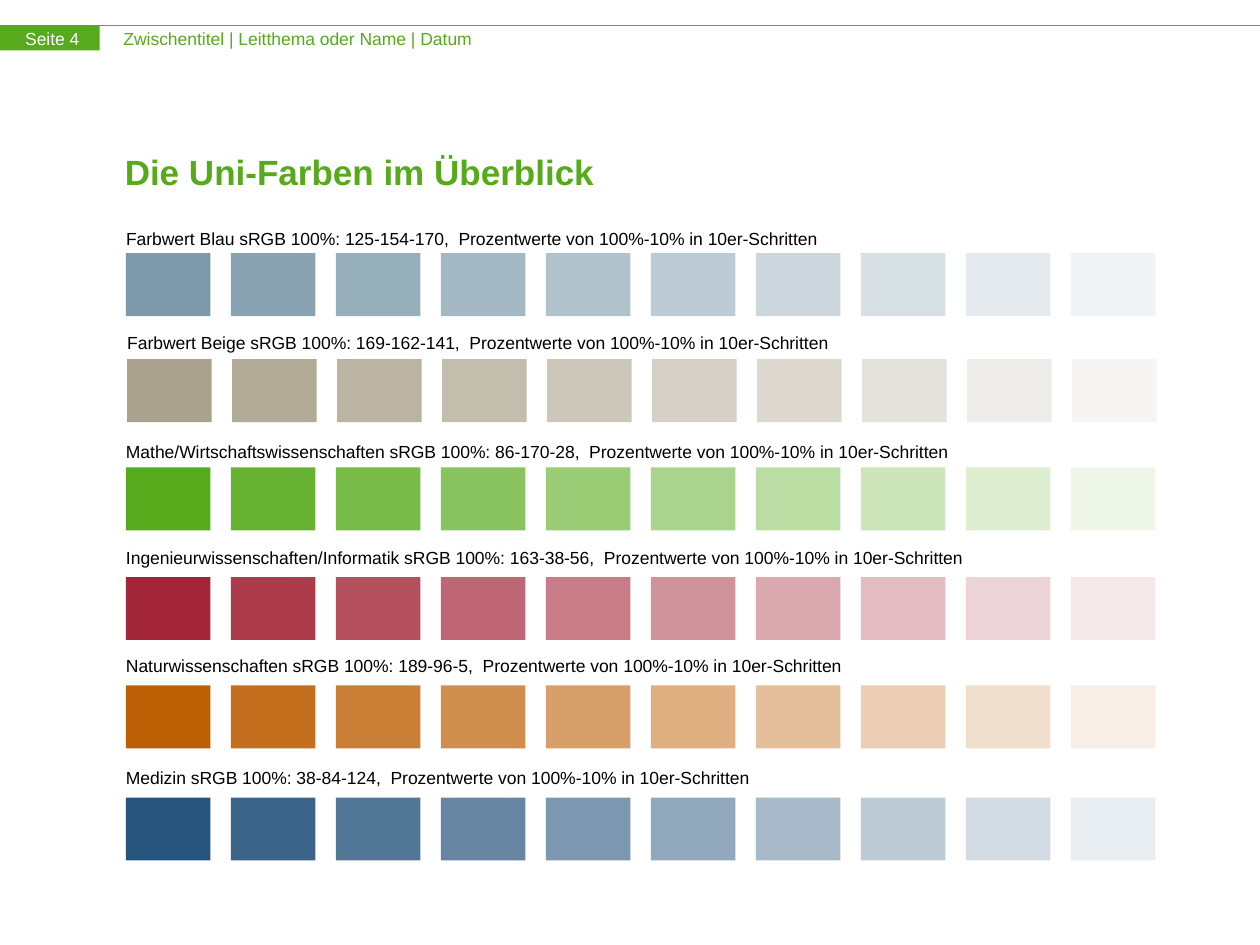
from lxml import etree
from pptx import Presentation
from pptx.dml.color import RGBColor
from pptx.enum import shapes, text
from pptx.oxml.ns import qn
from pptx.util import Inches, Pt

GREEN = "56AA1C"
STEPS = 10
SWATCH_PITCH = 5 / 6
SWATCH_WIDTH, SWATCH_HEIGHT = 0.67, 0.5

# name, sRGB values, colour, left, label top, label width, swatch top
PALETTES = [
    ("Farbwert Blau", "125-154-170", "7D9AAA", 1.0, 1.78, 6.32, 2.01),
    ("Farbwert Beige", "169-162-141", "AAA28D", 1.01, 2.61, 6.32, 2.85),
    ("Mathe/Wirtschaftswissenschaften", "86-170-28", "57AA1C", 1.0, 3.47, 7, 3.71),
    ("Ingenieurwissenschaften/Informatik", "163-38-56", "A32638", 1.0, 4.31, 8.67, 4.58),
    ("Naturwissenschaften", "189-96-5", "BD6005", 1.0, 5.17, 8.67, 5.44),
    ("Medizin", "38-84-124", "26547C", 1.0, 6.06, 8.67, 6.33),
]


def rgb(color):
    return RGBColor.from_string(color)


def style_paragraph(paragraph, size, color, bold=False, line_spacing=None):
    paragraph.font.name = "Arial"
    paragraph.font.size = Pt(size)
    paragraph.font.bold = bold
    paragraph.font.color.rgb = rgb(color)
    paragraph.alignment = text.PP_ALIGN.LEFT
    if line_spacing:
        paragraph.line_spacing = Pt(line_spacing)


def add_label(slide, wording, left, top, width, height, color, line_spacing=None):
    label = slide.shapes.add_textbox(
        Inches(left), Inches(top), Inches(width), Inches(height))
    frame = label.text_frame
    frame.margin_left = frame.margin_right = 0
    frame.margin_top = frame.margin_bottom = 0
    frame.word_wrap = True
    frame.text = wording
    style_paragraph(frame.paragraphs[0], 10, color, line_spacing=line_spacing)


def add_block(slide, left, top, width, height, color, opacity=100):
    """Add a borderless rectangle; opacity is in percent."""
    block = slide.shapes.add_shape(
        shapes.MSO_SHAPE.RECTANGLE,
        Inches(left), Inches(top), Inches(width), Inches(height))
    block.shadow.inherit = False
    block.line.fill.background()
    block.fill.solid()
    block.fill.fore_color.rgb = rgb(color)
    if opacity < 100:
        fill_color = block.fill._xPr.find(qn("a:solidFill"))[0]
        alpha = etree.SubElement(fill_color, qn("a:alpha"))
        alpha.set("val", str(opacity * 1000))


def add_header(slide):
    rule = slide.shapes.add_connector(
        shapes.MSO_CONNECTOR.STRAIGHT, 0, Inches(0.2), Inches(10), Inches(0.2))
    rule.line.color.rgb = rgb(GREEN)
    rule.line.width = Pt(0.75)
    etree.SubElement(rule._element.spPr, qn("a:effectLst"))
    add_block(slide, 0, 0.2, 0.79, 0.2, GREEN)
    add_label(slide, "Zwischentitel | Leitthema oder Name | Datum",
              0.98, 0.22, 6.6, 0.17, GREEN)
    add_label(slide, "Seite 4", 0.2, 0.22, 0.62, 0.17, "FFFFFF")


def set_title(slide, wording):
    title = slide.shapes.title
    title.left, title.top = Inches(0.89), Inches(1)
    title.width, title.height = Inches(8.53), Inches(0.72)
    title.text_frame.text = wording
    title.text_frame.vertical_anchor = text.MSO_ANCHOR.MIDDLE
    style_paragraph(title.text_frame.paragraphs[0], 20, GREEN,
                    bold=True, line_spacing=24)


def add_palette(slide, name, values, color, left, label_top, label_width, swatch_top):
    """Add a label and its row of swatches, fading from 100 % to 10 %."""
    add_label(slide,
              f"{name} sRGB 100%: {values},  Prozentwerte von 100%-10% in 10er-Schritten",
              left, label_top, label_width, 0.19, "000000", line_spacing=14)
    for step in range(STEPS):
        add_block(slide, left + step * SWATCH_PITCH, swatch_top,
                  SWATCH_WIDTH, SWATCH_HEIGHT, color, opacity=100 - 10 * step)


def main():
    deck = Presentation()
    deck.slide_width, deck.slide_height = Inches(10), Inches(7.5)
    slide = deck.slides.add_slide(deck.slide_layouts[5])
    add_header(slide)
    set_title(slide, "Die Uni-Farben im Überblick")
    for palette in PALETTES:
        add_palette(slide, *palette)
    deck.save("out.pptx")


if __name__ == "__main__":
    main()
